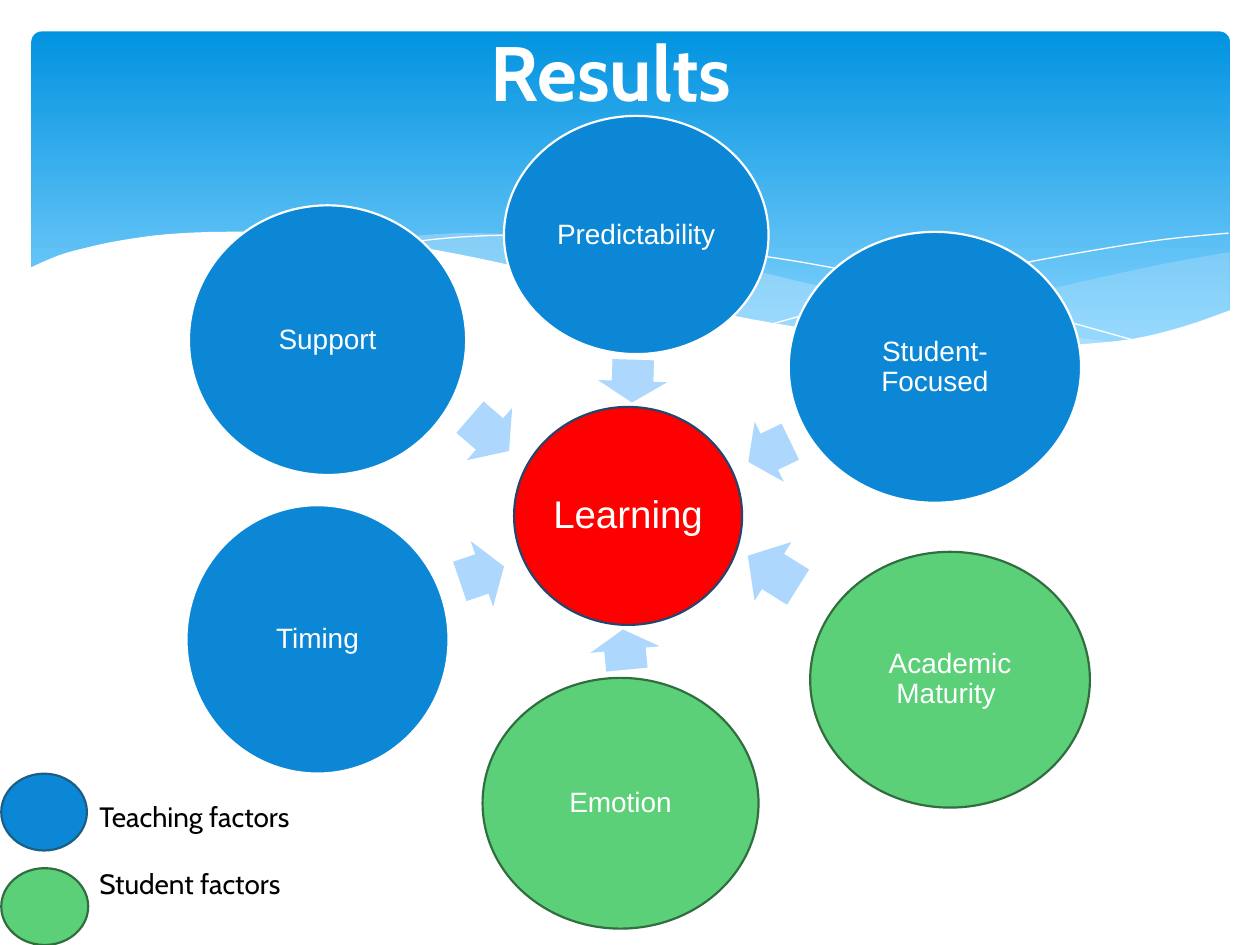
from dataclasses import dataclass

from lxml import etree
from pptx import Presentation
from pptx.dml.color import RGBColor
from pptx.enum.shapes import MSO_SHAPE
from pptx.enum.text import MSO_ANCHOR, PP_ALIGN
from pptx.oxml.ns import qn
from pptx.util import Inches, Pt

ELLIPSE = MSO_SHAPE.OVAL
ARROW = MSO_SHAPE.RIGHT_ARROW
ROUNDED = MSO_SHAPE.ROUNDED_RECTANGLE
MIDDLE, TOP = MSO_ANCHOR.MIDDLE, MSO_ANCHOR.TOP
CENTER, LEFT = PP_ALIGN.CENTER, PP_ALIGN.LEFT

WHITE = RGBColor(0xFF, 0xFF, 0xFF)
BLACK = RGBColor(0x00, 0x00, 0x00)
SKY_TOP = RGBColor(0x02, 0x93, 0xE0)
SKY_BOTTOM = RGBColor(0x83, 0xD3, 0xFE)
RIPPLE = RGBColor(0xC6, 0xE7, 0xFC)
RED = RGBColor(0xFF, 0x00, 0x00)
NAVY = RGBColor(0x24, 0x45, 0x6E)
BLUE = RGBColor(0x0B, 0x87, 0xD6)
DARK_BLUE = RGBColor(0x19, 0x5F, 0x84)
GREEN = RGBColor(0x5B, 0xD0, 0x78)
DARK_GREEN = RGBColor(0x30, 0x6D, 0x3F)
PALE_BLUE = RGBColor(0xAE, 0xD7, 0xFE)

# The slide is a grid of 100 columns by 75 rows of square cells.
COLUMNS, ROWS = 100, 75
CELL = Inches(0.1)

Point = tuple[float, float]
Box = tuple[float, float, float, float]


@dataclass(frozen=True)
class Circle:
    box: Box
    fill: RGBColor
    outline: RGBColor
    label: str = ""
    size: int = 16


@dataclass(frozen=True)
class Arrow:
    box: Box
    angle: float


@dataclass(frozen=True)
class Wave:
    """Curves joined end to end; a wave without fill is an open hairline."""
    curves: list[list[Point]]
    fill: RGBColor | None = None
    opacity: int = 100


CIRCLES = [
    Circle((40.8, 32.3, 18.1, 17.3), RED, NAVY, "Learning", 22),
    Circle((40, 9.2, 21, 18.9), BLUE, WHITE, "Predictability"),
    Circle((62.6, 18.4, 23.2, 21.5), BLUE, WHITE, "Student- Focused"),
    Circle((64.3, 43.8, 22.2, 20.3), GREEN, DARK_GREEN, "Academic Maturity "),
    Circle((38.3, 53.8, 21.9, 19.9), GREEN, DARK_GREEN, "Emotion"),
    Circle((14.8, 40.1, 20.8, 21.3), BLUE, WHITE, "Timing"),
    Circle((15, 16.3, 22, 21.4), BLUE, WHITE, "Support"),
    Circle((0.1, 68.9, 6.9, 6.1), GREEN, DARK_GREEN),
    Circle((0.1, 61.4, 6.8, 6.1), BLUE, DARK_BLUE),
]

ARROWS = [
    Arrow((48.5, 27.5, 3.4, 5.5), 91.8),
    Arrow((59.2, 33.2, 3.7, 5.3), 154.2),
    Arrow((59, 42.6, 4.7, 5.5), 212.1),
    Arrow((48, 48.8, 3.2, 5.5), 264.5),
    Arrow((36.4, 42.8, 3.7, 5.5), 341.2),
    Arrow((36.8, 31.7, 4.1, 5.5), 40.9),
]

WAVES = [
    Wave([[(97.6, 20), (92.1, 21), (86.1, 22.3), (77.9, 24.2), (70.6, 25.7), (66.1, 26.5)],
          [(66.1, 26.5), (71.9, 27.2), (76.9, 27.7), (81.4, 27.8), (86.3, 27.5),
           (90.5, 26.9), (94.2, 25.9), (97.6, 24.7)]], RIPPLE, 29),
    Wave([[(89.3, 27.3), (83.7, 26.5), (77.5, 25.4), (70.6, 24), (62.9, 22.2), (56.9, 20.8),
           (51.4, 19.8), (46.5, 19.1), (42, 18.7), (38, 18.5), (34.4, 18.6), (28.6, 19.1)],
          [(28.6, 19.1), (34.2, 19.9), (40.4, 21.1), (44.9, 22.2), (53, 24), (60.1, 25.5),
           (66.5, 26.6), (72.2, 27.4), (77.3, 27.7), (81.8, 27.8), (89.3, 27.3)]], RIPPLE, 40),
    Wave([[(30.9, 19.5), (34.4, 19), (38.7, 18.7), (43.3, 18.7), (48.9, 19), (55.6, 19.7),
           (63.6, 20.8), (72.7, 22.6), (79.5, 24.1), (90.7, 27.2)]]),
    Wave([[(61.3, 25.7), (67.2, 24.1), (74.8, 22.3), (80.6, 21), (86.6, 19.9),
           (92.4, 19), (97.5, 18.5)]]),
    Wave([[(97.7, 24.6), (94, 25.9), (89.9, 26.9), (85, 27.4), (80.9, 27.7), (76.1, 27.5),
           (70.8, 27), (64.8, 26.2), (57.9, 25), (50.3, 23.3), (44.7, 22), (36.5, 20.2),
           (29.2, 19), (23, 18.5), (17.7, 18.4), (13.2, 18.6), (9.5, 19.1), (6.7, 19.7),
           (4.6, 20.3), (2.3, 21.3)],
          [(2.3, 32.9), (97.7, 32.9)]], WHITE),
]


def cells(*counts: float) -> list[int]:
    return [round(count * CELL) for count in counts]


def smooth(knots: list[Point], steps: int = 4) -> list[Point]:
    """Points of a Catmull-Rom curve through the knots."""
    if len(knots) < 3:
        return knots
    padded = [knots[0], *knots, knots[-1]]
    points = [knots[0]]
    for before, start, end, after in zip(padded, padded[1:], padded[2:], padded[3:]):
        for step in range(1, steps + 1):
            t = step / steps
            points.append(tuple(
                b + ((c - a) * t + (2 * a - 5 * b + 4 * c - d) * t**2
                     + (3 * b - a - 3 * c + d) * t**3) / 2
                for a, b, c, d in zip(before, start, end, after)))
    return points


def draw_wave(shapes, wave: Wave) -> None:
    points = [cells(*point) for curve in wave.curves for point in smooth(curve)]
    builder = shapes.build_freeform(*points[0])
    builder.add_line_segments(points[1:], close=wave.fill is not None)
    outline = builder.convert_to_shape()
    outline.shadow.inherit = False
    if wave.fill is None:
        outline.fill.background()
        outline.line.color.rgb = WHITE
        outline.line.width = Pt(0)
        return
    outline.fill.solid()
    outline.fill.fore_color.rgb = wave.fill
    outline.line.fill.background()
    if wave.opacity < 100:
        color = outline._element.spPr.find(qn("a:solidFill"))[0]
        etree.SubElement(color, qn("a:alpha")).set("val", str(wave.opacity * 1000))


def draw_sky(shapes) -> None:
    sky = shapes.add_shape(ROUNDED, *cells(2.5, 2.5, 95.1, 27))
    sky.adjustments[0] = 0.03
    sky.shadow.inherit = False
    sky.line.fill.background()
    sky.fill.gradient()
    sky.fill.gradient_angle = 270
    for stop, color, position in zip(sky.fill.gradient_stops, (SKY_TOP, SKY_BOTTOM), (0, 0.9)):
        stop.color.rgb = color
        stop.position = position


def write(frame, lines: list[str], font: dict, align=CENTER, anchor=MIDDLE,
          spacing: float = 1, gap: float = 0) -> None:
    """Fill a text frame; gap is the space in points between its lines."""
    frame.word_wrap = True
    frame.vertical_anchor = anchor
    for number, line in enumerate(lines):
        paragraph = frame.add_paragraph() if number else frame.paragraphs[0]
        paragraph.alignment = align
        paragraph.line_spacing = spacing
        paragraph.space_before = Pt(gap if number else 0)
        run = paragraph.add_run()
        run.text = line
        for attribute, value in font.items():
            if attribute == "color":
                run.font.color.rgb = value
            else:
                setattr(run.font, attribute, value)


def draw_circle(shapes, circle: Circle) -> None:
    disc = shapes.add_shape(ELLIPSE, *cells(*circle.box))
    disc.shadow.inherit = False
    disc.fill.solid()
    disc.fill.fore_color.rgb = circle.fill
    disc.line.color.rgb = circle.outline
    disc.line.width = Pt(1.25)
    if circle.label:
        for side in ("left", "top", "right", "bottom"):
            setattr(disc.text_frame, f"margin_{side}", Inches(0.02))
        write(disc.text_frame, [circle.label],
              {"name": "Arial", "size": Pt(circle.size), "color": WHITE}, spacing=0.9)


def draw_arrow(shapes, arrow: Arrow) -> None:
    pointer = shapes.add_shape(ARROW, *cells(*arrow.box))
    pointer.adjustments[0] = 0.6
    pointer.rotation = arrow.angle
    pointer.shadow.inherit = False
    pointer.fill.solid()
    pointer.fill.fore_color.rgb = PALE_BLUE
    pointer.line.fill.background()


def main() -> None:
    deck = Presentation()
    deck.slide_width, deck.slide_height = cells(COLUMNS, ROWS)
    shapes = deck.slides.add_slide(deck.slide_layouts[6]).shapes
    draw_sky(shapes)
    for wave in WAVES:
        draw_wave(shapes, wave)
    title = shapes.add_textbox(*cells(3.5, -1.2, 90, 13.7))
    write(title.text_frame, ["Results"],
          {"name": "Cabin", "size": Pt(44), "bold": True, "color": WHITE})
    for arrow in ARROWS:
        draw_arrow(shapes, arrow)
    for circle in CIRCLES:
        draw_circle(shapes, circle)
    legend = shapes.add_textbox(*cells(6.9, 63, 19.6, 9.1))
    write(legend.text_frame, ["Teaching factors", "Student factors"],
          {"name": "Cabin", "size": Pt(16), "color": BLACK}, LEFT, TOP, gap=19)
    deck.save("out.pptx")


if __name__ == "__main__":
    main()
